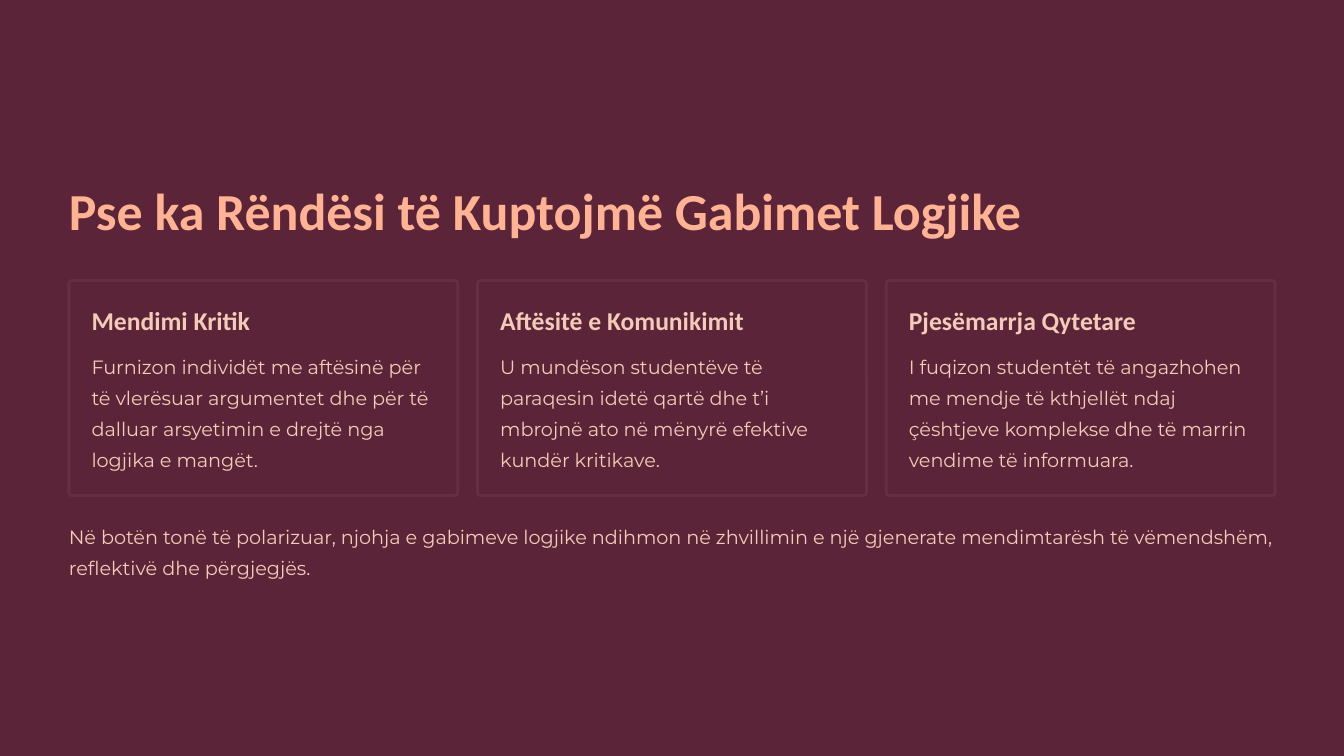
import pptx
import pptx.dml.color
import pptx.enum.shapes
import pptx.enum.text
import pptx.util
from pptx.util import Inches

PLUM = pptx.dml.color.RGBColor(0x5C, 0x24, 0x38)
BORDER = pptx.dml.color.RGBColor(0x66, 0x2E, 0x42)
PEACH = pptx.dml.color.RGBColor(0xFF, 0xB3, 0x93)
CREAM = pptx.dml.color.RGBColor(0xF4, 0xCA, 0xB8)

TITLE = {"name": "Calibri", "size": pptx.util.Pt(44.5), "bold": True}
HEADING = {"name": "Calibri", "size": pptx.util.Pt(22), "bold": True}
BODY = {"name": "Montserrat", "size": pptx.util.Pt(16.5), "bold": False}

LEFT = 0.82
CONTENT_WIDTH = 14.36
CARD_TOP = 3.34
CARD_WIDTH = 4.63
CARD_HEIGHT = 2.56
CARD_STEP = (CONTENT_WIDTH - CARD_WIDTH) / 2
PADDING = 0.27

CARDS = [
    ("Mendimi Kritik",
     "Furnizon individët me aftësinë për të vlerësuar argumentet dhe për të "
     "dalluar arsyetimin e drejtë nga logjika e mangët."),
    ("Aftësitë e Komunikimit",
     "U mundëson studentëve të paraqesin idetë qartë dhe t’i mbrojnë ato në "
     "mënyrë efektive kundër kritikave."),
    ("Pjesëmarrja Qytetare",
     "I fuqizon studentët të angazhohen me mendje të kthjellët ndaj çështjeve "
     "komplekse dhe të marrin vendime të informuara."),
]
CLOSING = ("Në botën tonë të polarizuar, njohja e gabimeve logjike ndihmon në "
           "zhvillimin e një gjenerate mendimtarësh të vëmendshëm, reflektivë "
           "dhe përgjegjës.")


def set_values(target, values):
    for name, value in values.items():
        setattr(target, name, value)


def fill_text(box, text, font, color, spacing):
    frame = box.text_frame
    set_values(frame, {
        "margin_left": 0, "margin_top": 0, "margin_right": 0, "margin_bottom": 0,
        "auto_size": pptx.enum.text.MSO_AUTO_SIZE.NONE,
        "vertical_anchor": pptx.enum.text.MSO_ANCHOR.TOP,
        "word_wrap": True,
    })
    para = frame.paragraphs[0]
    set_values(para, {
        "alignment": pptx.enum.text.PP_ALIGN.LEFT,
        "line_spacing": pptx.util.Pt(spacing),
    })
    span = para.add_run()
    span.text = text
    set_values(span.font, font)
    span.font.color.rgb = color


def add_title(page, text):
    title = page.shapes.title
    set_values(title, {"left": Inches(LEFT), "top": Inches(2.09),
                       "width": Inches(CONTENT_WIDTH), "height": Inches(0.78)})
    fill_text(title, text, TITLE, PEACH, 56)


def add_text(page, left, top, width, height, text, font, spacing):
    box = page.shapes.add_textbox(
        Inches(left), Inches(top), Inches(width), Inches(height))
    fill_text(box, text, font, CREAM, spacing)


def add_card(page, left, heading, body):
    card = page.shapes.add_shape(
        pptx.enum.shapes.MSO_SHAPE.ROUNDED_RECTANGLE, Inches(left),
        Inches(CARD_TOP), Inches(CARD_WIDTH), Inches(CARD_HEIGHT))
    card.adjustments[0] = 0.014
    card.shadow.inherit = False
    card.fill.solid()
    card.fill.fore_color.rgb = PLUM
    card.line.color.rgb = BORDER
    card.line.width = pptx.util.Pt(2.4)

    text_left = left + PADDING
    add_text(page, text_left, 3.61, 3.34, 0.39, heading, HEADING, 28)
    add_text(page, text_left, 4.14, 4.1, 1.5, body, BODY, 26.5)


def main():
    deck = pptx.Presentation()
    deck.slide_width = Inches(16)
    deck.slide_height = Inches(9)
    page = deck.slides.add_slide(deck.slide_layouts.get_by_name("Title Only"))
    page.background.fill.solid()
    page.background.fill.fore_color.rgb = PLUM

    add_title(page, "Pse ka Rëndësi të Kuptojmë Gabimet Logjike")
    for index, (heading, body) in enumerate(CARDS):
        add_card(page, LEFT + index * CARD_STEP, heading, body)
    add_text(page, LEFT, 6.16, CONTENT_WIDTH, 0.75, CLOSING, BODY, 26.5)

    deck.save("out.pptx")


if __name__ == "__main__":
    main()
